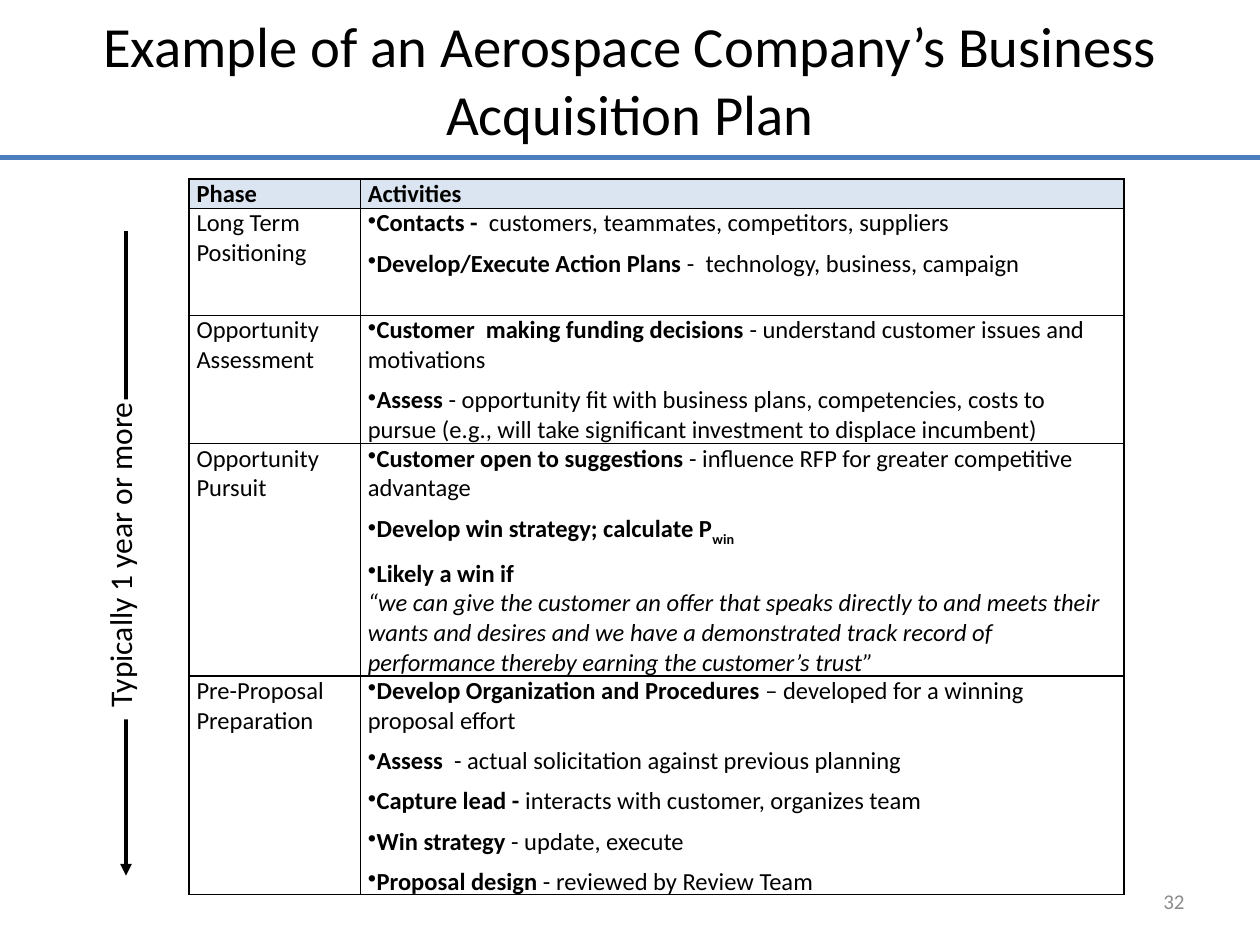
from pptx import Presentation
from pptx.dml.color import RGBColor
from pptx.enum.shapes import MSO_CONNECTOR, MSO_SHAPE
from pptx.enum.text import MSO_ANCHOR, MSO_AUTO_SIZE, PP_ALIGN
from pptx.oxml.ns import qn
from pptx.util import Inches, Pt
from lxml import etree

STRAIGHT = MSO_CONNECTOR.STRAIGHT
RECTANGLE = MSO_SHAPE.RECTANGLE
MIDDLE, TOP = MSO_ANCHOR.MIDDLE, MSO_ANCHOR.TOP
LEFT, CENTER, RIGHT = PP_ALIGN.LEFT, PP_ALIGN.CENTER, PP_ALIGN.RIGHT
GROW = MSO_AUTO_SIZE.SHAPE_TO_FIT_TEXT

BLACK = RGBColor(0x00, 0x00, 0x00)
WHITE = RGBColor(0xFF, 0xFF, 0xFF)
GRAY = RGBColor(0x8C, 0x8C, 0x8C)
RULE_BLUE = RGBColor(0x4B, 0x7E, 0xBC)
HEADER_BLUE = RGBColor(0xDB, 0xE5, 0xF1)

COLUMN_WIDTHS = [1.36, 6.06]
ROW_HEIGHTS = [0.19, 0.85, 0.79, 1.42, 1.7]
HEADINGS = ["Phase", "Activities"]
TRUST_QUOTE = (
    "“we can give the customer an offer that speaks directly to and meets their "
    "wants and desires and we have a demonstrated track record of performance "
    "thereby earning the customer’s trust”"
)
PHASES = [
    ("Long Term Positioning", [
        [("Contacts -  ", "bold"), ("customers, teammates, competitors, suppliers", "plain")],
        [("Develop/Execute Action Plans", "bold"), (" -  technology, business, campaign", "plain")],
    ]),
    ("Opportunity Assessment", [
        [("Customer  making funding decisions ", "bold"),
         ("- understand customer issues and motivations", "plain")],
        [("Assess ", "bold"),
         ("- opportunity fit with business plans, competencies, costs to pursue "
          "(e.g., will take significant investment to displace incumbent)", "plain")],
    ]),
    ("Opportunity Pursuit", [
        [("Customer open to suggestions ", "bold"),
         ("- influence RFP for greater competitive advantage", "plain")],
        [("Develop win strategy; calculate P", "bold"), ("win", "subscript")],
        [("Likely a win if ", "bold"), ("", "break"), (TRUST_QUOTE, "italic")],
    ]),
    ("Pre-Proposal Preparation", [
        [("Develop Organization and Procedures ", "bold"),
         ("– developed for a winning proposal effort", "plain")],
        [("Assess ", "bold"), (" - actual solicitation against previous planning", "plain")],
        [("Capture lead - ", "bold"), ("interacts with customer, organizes team", "plain")],
        [("Win strategy ", "bold"), ("- update, execute", "plain")],
        [("Proposal design ", "bold"), ("- reviewed by Review Team", "plain")],
    ]),
]


class SlideBuilder:
    font_name = "Calibri"
    table_size = 14

    def __init__(self, slide):
        self.slide = slide

    def style(self, paragraph, size, color=BLACK, bold=False):
        font = paragraph.font
        font.name, font.size, font.bold = self.font_name, Pt(size), bold
        font.color.rgb = color

    def line(self, start, end, color, width, arrow=False):
        points = [Inches(value) for value in (*start, *end)]
        connector = self.slide.shapes.add_connector(STRAIGHT, *points)
        connector.line.color.rgb = color
        connector.line.width = Pt(width)
        if arrow:
            outline = connector.line._get_or_add_ln()
            etree.SubElement(outline, qn("a:tailEnd"), type="triangle")
        etree.SubElement(connector._element.spPr, qn("a:effectLst"))

    def text(self, box, words, size, align, color=BLACK):
        frame = self.slide.shapes.add_textbox(*map(Inches, box)).text_frame
        frame.word_wrap = True
        frame.vertical_anchor = MIDDLE
        paragraph = frame.paragraphs[0]
        paragraph.text = words
        paragraph.alignment = align
        self.style(paragraph, size, color)

    def vertical_label(self, box, words, size):
        label = self.slide.shapes.add_shape(RECTANGLE, *map(Inches, box))
        label.shadow.inherit = False
        label.fill.solid()
        label.fill.fore_color.rgb = WHITE
        label.line.fill.background()
        frame = label.text_frame
        frame.word_wrap = False
        frame.auto_size = GROW
        frame.vertical_anchor = TOP
        frame._txBody.bodyPr.set("vert", "vert270")
        paragraph = frame.paragraphs[0]
        paragraph.text = words
        paragraph.alignment = LEFT
        self.style(paragraph, size)

    def cell(self, cell, fill=None):
        cell.margin_left = cell.margin_right = Inches(0.06)
        cell.margin_top = cell.margin_bottom = 0
        properties = cell._tc.get_or_add_tcPr()
        for side in ("lnL", "lnR", "lnT", "lnB"):
            border = etree.SubElement(properties, qn(f"a:{side}"), w=str(Pt(1)))
            solid = etree.SubElement(border, qn("a:solidFill"))
            etree.SubElement(solid, qn("a:srgbClr"), val=str(BLACK))
        if fill is None:
            cell.fill.background()
        else:
            cell.fill.solid()
            cell.fill.fore_color.rgb = fill

    def cell_text(self, cell, words, bold=False):
        paragraph = cell.text_frame.paragraphs[0]
        paragraph.text = words
        self.style(paragraph, self.table_size, bold=bold)

    def activity(self, paragraph, parts):
        properties = paragraph._p.get_or_add_pPr()
        properties.set("marL", "0")
        properties.set("indent", str(Inches(-0.1)))
        etree.SubElement(properties, qn("a:buChar"), char="•")
        paragraph.space_after = Pt(6)
        self.style(paragraph, self.table_size)
        for words, look in parts:
            if look == "break":
                paragraph.add_line_break()
                continue
            run = paragraph.add_run()
            run.text = words
            run.font.bold = look in ("bold", "subscript")
            run.font.italic = look == "italic"
            if look == "subscript":
                run._r.get_or_add_rPr().set("baseline", "-30000")

    def phase_table(self, left, top):
        size = (sum(COLUMN_WIDTHS), sum(ROW_HEIGHTS))
        table = self.slide.shapes.add_table(
            len(ROW_HEIGHTS), len(COLUMN_WIDTHS), *map(Inches, (left, top, *size))
        ).table
        for column, width in zip(table.columns, COLUMN_WIDTHS):
            column.width = Inches(width)
        for row, height in zip(table.rows, ROW_HEIGHTS):
            row.height = Inches(height)
        for column, heading in enumerate(HEADINGS):
            self.cell(table.cell(0, column), HEADER_BLUE)
            self.cell_text(table.cell(0, column), heading, bold=True)
        for row, (phase, activities) in enumerate(PHASES, start=1):
            phase_cell, activity_cell = table.cell(row, 0), table.cell(row, 1)
            self.cell(phase_cell)
            self.cell(activity_cell)
            self.cell_text(phase_cell, phase)
            frame = activity_cell.text_frame
            for index, parts in enumerate(activities):
                paragraph = frame.add_paragraph() if index else frame.paragraphs[0]
                self.activity(paragraph, parts)


def main():
    presentation = Presentation()
    presentation.slide_width = Inches(10)
    presentation.slide_height = Inches(7.5)
    builder = SlideBuilder(presentation.slides.add_slide(presentation.slide_layouts[6]))
    builder.line((0, 1.25), (10, 1.25), RULE_BLUE, 3)
    builder.text((0.5, 0, 9, 1.25),
                 "Example of an Aerospace Company’s Business Acquisition Plan", 32.4, CENTER)
    builder.text((7.17, 6.95, 2.33, 0.4), "32", 12, RIGHT, GRAY)
    builder.phase_table(1.5, 1.42)
    builder.line((1, 1.83), (1, 6.95), BLACK, 2.25, arrow=True)
    builder.vertical_label((0.75, 3.17, 0.5, 2.54), "Typically 1 year or more", 18)
    presentation.save("out.pptx")


if __name__ == "__main__":
    main()
